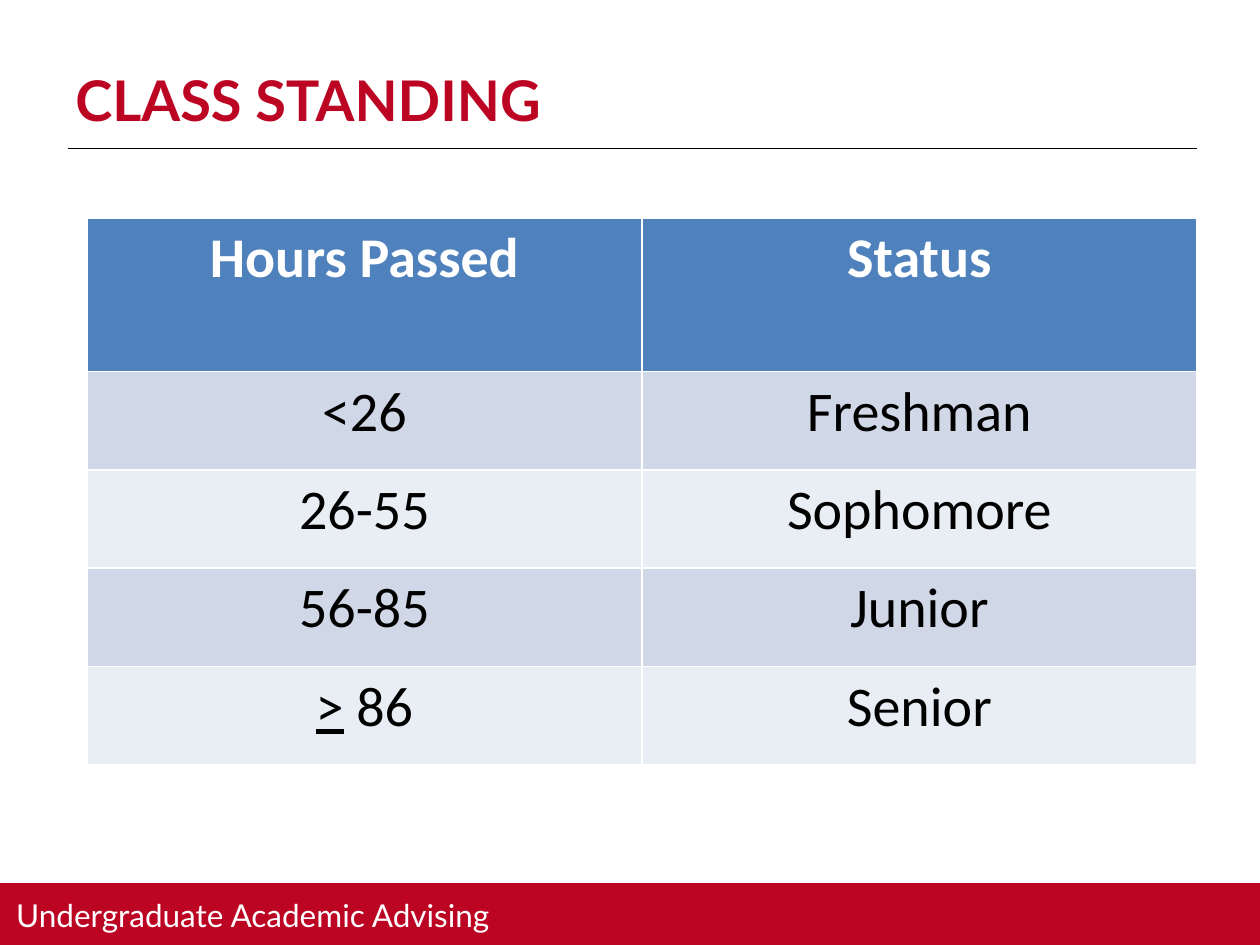
from lxml import etree
from pptx import Presentation
from pptx.dml.color import RGBColor
from pptx.enum.shapes import MSO_CONNECTOR, MSO_SHAPE
from pptx.enum.text import MSO_ANCHOR, PP_ALIGN
from pptx.oxml.ns import qn
from pptx.util import Inches, Pt

RED = RGBColor(0xBC, 0x05, 0x23)
BLACK = RGBColor(0x00, 0x00, 0x00)
WHITE = RGBColor(0xFF, 0xFF, 0xFF)
HEADER_BLUE = RGBColor(0x4F, 0x81, 0xBD)
BANDS = [RGBColor(0xD0, 0xD8, 0xE8), RGBColor(0xE9, 0xED, 0xF4)]


def write_text(frame, text, font="Calibri", size=32, color=BLACK, bold=False,
               align=PP_ALIGN.LEFT, underlined=""):
    """Write one paragraph; the leading characters in `underlined` come first."""
    frame.word_wrap = True
    frame.vertical_anchor = MSO_ANCHOR.TOP
    paragraph = frame.paragraphs[0]
    paragraph.alignment = align
    for part, underline in ((underlined, True), (text, False)):
        if part:
            run = paragraph.add_run()
            run.text = part
            run.font.name = font
            run.font.size = Pt(size)
            run.font.bold = bold
            run.font.underline = underline
            run.font.color.rgb = color


prs = Presentation()
prs.slide_width, prs.slide_height = Inches(10), Inches(7.5)
slide = prs.slides.add_slide(prs.slide_layouts[6])
shapes = slide.shapes

# Title with its rule
rule = shapes.add_connector(MSO_CONNECTOR.STRAIGHT, Inches(0.54), Inches(1.18),
                            Inches(9.5), Inches(1.18))
rule.line.color.rgb = BLACK
rule.line.width = Pt(0.75)
etree.SubElement(rule._element.spPr, qn("a:effectLst"))

title = shapes.add_textbox(Inches(0.5), Inches(0.47), Inches(9), Inches(0.94))
write_text(title.text_frame, "CLASS STANDING", font="Lato", color=RED, bold=True)

# Class standing table
standings = [
    ("Hours Passed", "Status"),
    ("<26", "Freshman"),
    ("26-55", "Sophomore"),
    ("56-85", "Junior"),
    (" 86", "Senior"),
]
table = shapes.add_table(len(standings), 2, Inches(0.69), Inches(1.73),
                         Inches(8.81), Inches(4.34)).table
for row, standing in enumerate(standings):
    is_header = row == 0
    table.rows[row].height = Inches(1.22 if is_header else 0.78)
    for column, text in enumerate(standing):
        cell = table.cell(row, column)
        cell.fill.solid()
        cell.fill.fore_color.rgb = HEADER_BLUE if is_header else BANDS[(row - 1) % 2]
        write_text(cell.text_frame, text, color=WHITE if is_header else BLACK,
                   bold=is_header, align=PP_ALIGN.CENTER,
                   underlined=">" if text == " 86" else "")

# Footer
footer_bar = shapes.add_shape(MSO_SHAPE.RECTANGLE, 0, Inches(7.01), Inches(10), Inches(0.49))
footer_bar.shadow.inherit = False
footer_bar.fill.solid()
footer_bar.fill.fore_color.rgb = RED
footer_bar.line.fill.background()

footer = shapes.add_textbox(Inches(0.03), Inches(7.06), Inches(4.15), Inches(0.44))
write_text(footer.text_frame, "Undergraduate Academic Advising", font="Lato", size=18,
           color=WHITE)

prs.save("out.pptx")
